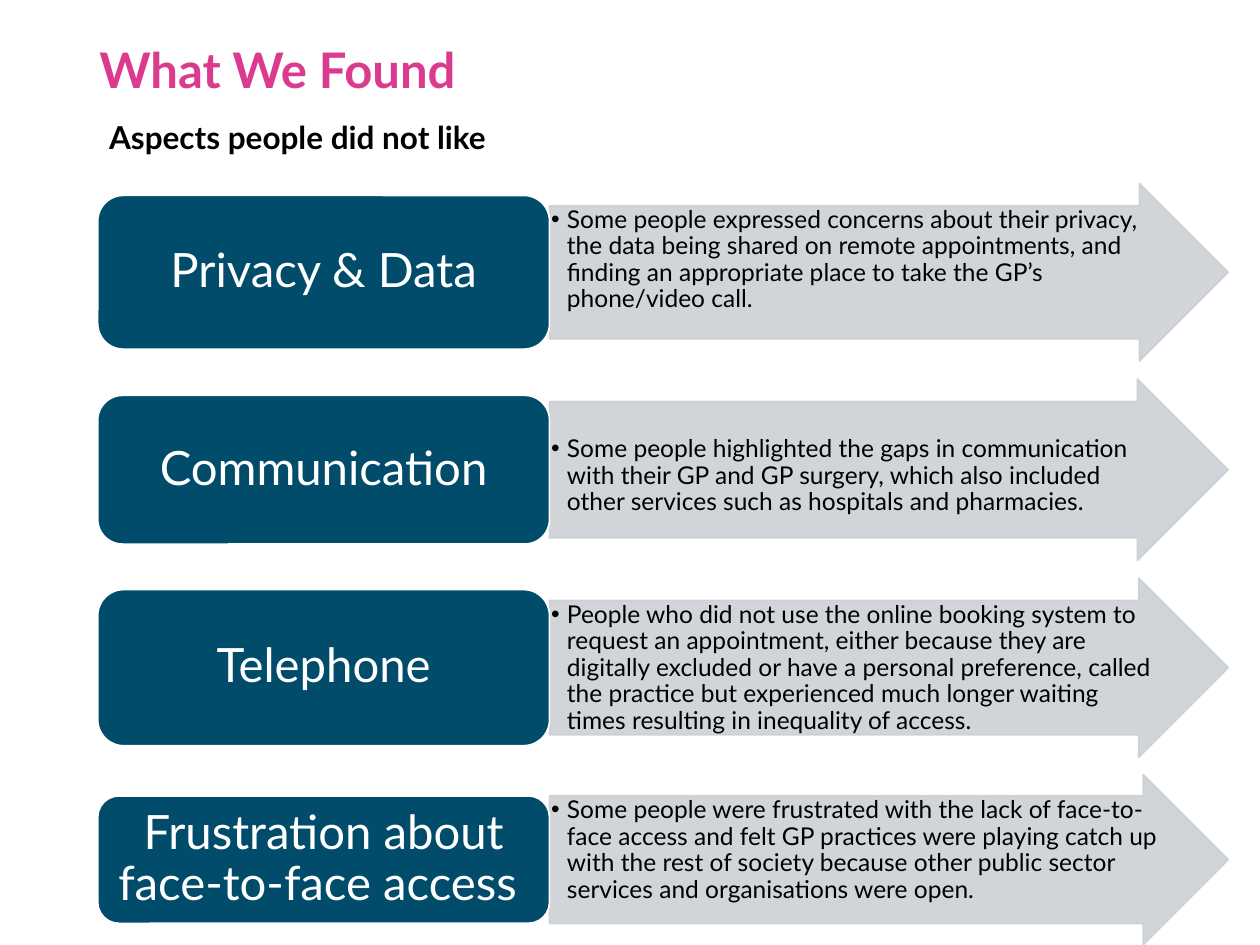
import pptx
import pptx.dml.color
import pptx.enum.shapes
import pptx.enum.text
import pptx.oxml.ns
import pptx.util
from pptx.util import Cm

SHAPES = pptx.enum.shapes.MSO_SHAPE
ALIGN = pptx.enum.text.PP_ALIGN
ANCHOR = pptx.enum.text.MSO_ANCHOR

COLOURS = {
    "heading": "DB3B8E",
    "label": "004C6A",
    "arrow": "CCD0D4",
    "text": "000000",
    "light": "FFFFFF",
}

FONTS = {
    "title": {"size": 28, "bold": True, "colour": "heading"},
    "subtitle": {"size": 18, "bold": True, "colour": "text"},
    "label": {"size": 27, "bold": False, "colour": "light"},
    "detail": {"size": 14, "bold": False, "colour": "text"},
}

LABEL_LEFT, LABEL_WIDTH = 1.97, 9.11
ARROW_LEFT, ARROW_WIDTH = 11.08, 13.68
ARROW_OPACITY = 90
BODY_SHARE = 0.75
BULLET_INDENT = 0.32

ASPECTS = [
    {
        "label": "Privacy & Data",
        "detail": "Some people expressed concerns about their privacy, the data being shared on remote appointments, and finding an appropriate place to take the GP’s phone/video call.",
        "middle": 5.49, "arrow_height": 3.58, "label_height": 3.1, "top_inset": 0.03,
    },
    {
        "label": "Communication",
        "detail": "Some people highlighted the gaps in communication with their GP and GP surgery, which also included other services such as hospitals and pharmacies.",
        "middle": 9.47, "arrow_height": 3.66, "label_height": 3.0, "top_inset": 0.7,
    },
    {
        "label": "Telephone",
        "detail": "People who did not use the online booking system to request an appointment, either because they are digitally excluded or have a personal preference, called the practice but experienced much longer waiting times resulting in inequality of access.",
        "middle": 13.46, "arrow_height": 3.61, "label_height": 3.15, "top_inset": 0.03,
    },
    {
        "label": "Frustration about face-to-face access ",
        "detail": "Some people were frustrated with the lack of face-to-face access and felt GP practices were playing catch up with the rest of society because other public sector services and organisations were open.",
        "middle": 17.33, "arrow_height": 3.43, "label_height": 2.57, "top_inset": 0.03,
    },
]


def colour(name):
    return pptx.dml.color.RGBColor.from_string(COLOURS[name])


def set_attributes(target, values):
    for name, value in values.items():
        setattr(target, name, value)


def write_text(shape, text, style, frame_format, paragraph_format, bullet=False):
    frame = shape.text_frame
    set_attributes(frame, {"word_wrap": True, **frame_format})
    frame.text = text
    paragraph = frame.paragraphs[0]
    if bullet:
        add_bullet(paragraph)
    set_attributes(paragraph, paragraph_format)
    font = FONTS[style]
    set_attributes(paragraph.runs[0].font, {
        "name": "Lato",
        "size": pptx.util.Pt(font["size"]),
        "bold": font["bold"],
    })
    paragraph.runs[0].font.color.rgb = colour(font["colour"])


def add_bullet(paragraph):
    properties = paragraph._p.get_or_add_pPr()
    properties.set("marL", str(Cm(BULLET_INDENT)))
    properties.set("indent", str(-Cm(BULLET_INDENT)))
    for tag, name, value in (("a:buFont", "typeface", "Arial"), ("a:buChar", "char", "•")):
        properties.append(properties.makeelement(pptx.oxml.ns.qn(tag), {name: value}))


def add_block(slide, kind, left, middle, width, height, fill, line):
    shape = slide.shapes.add_shape(
        kind, Cm(left), Cm(middle - height / 2), Cm(width), Cm(height))
    shape.shadow.inherit = False
    shape.fill.solid()
    shape.fill.fore_color.rgb = colour(fill)
    shape.line.color.rgb = colour(line)
    shape.line.width = pptx.util.Pt(1)
    return shape


def set_opacity(shape, percent):
    for element in shape._element.spPr.iter(pptx.oxml.ns.qn("a:srgbClr")):
        alpha = element.makeelement(pptx.oxml.ns.qn("a:alpha"), {"val": str(percent * 1000)})
        element.append(alpha)


def add_headings(slide):
    title = slide.shapes.title
    set_attributes(title, {
        "left": Cm(1.75), "top": Cm(0.81), "width": Cm(21.9), "height": Cm(2.24),
    })
    write_text(title, "What We Found", "title",
               {"vertical_anchor": ANCHOR.TOP},
               {"alignment": ALIGN.LEFT, "line_spacing": 0.9})
    subtitle = slide.shapes.add_textbox(Cm(1.95), Cm(2.26), Cm(12.14), Cm(1.02))
    write_text(subtitle, "Aspects people did not like", "subtitle", {}, {})


def add_detail(slide, aspect):
    height = aspect["arrow_height"]
    arrow = add_block(slide, SHAPES.RIGHT_ARROW, ARROW_LEFT, aspect["middle"],
                      ARROW_WIDTH, height, "arrow", "arrow")
    arrow.adjustments[0] = BODY_SHARE
    arrow.adjustments[1] = 0.5
    set_opacity(arrow, ARROW_OPACITY)

    body_height = height * BODY_SHARE
    detail = slide.shapes.add_textbox(
        Cm(ARROW_LEFT), Cm(aspect["middle"] - body_height / 2),
        Cm(ARROW_WIDTH - body_height / 2), Cm(body_height))
    write_text(detail, aspect["detail"], "detail", {
        "margin_left": Cm(0.03), "margin_right": Cm(0.03),
        "margin_top": Cm(aspect["top_inset"]), "margin_bottom": Cm(0.03),
    }, {"line_spacing": 0.9}, bullet=True)


def add_label(slide, aspect):
    label = add_block(slide, SHAPES.ROUNDED_RECTANGLE, LABEL_LEFT, aspect["middle"],
                      LABEL_WIDTH, aspect["label_height"], "label", "light")
    write_text(label, aspect["label"], "label", {
        "vertical_anchor": ANCHOR.MIDDLE,
        "margin_left": Cm(0.28), "margin_right": Cm(0.28),
        "margin_top": Cm(0.15), "margin_bottom": Cm(0.15),
    }, {"alignment": ALIGN.CENTER, "line_spacing": 0.9})


def main():
    presentation = pptx.Presentation()
    set_attributes(presentation, {"slide_width": Cm(25.4), "slide_height": Cm(19.05)})
    slide = presentation.slides.add_slide(presentation.slide_layouts[5])
    add_headings(slide)
    for aspect in ASPECTS:
        add_detail(slide, aspect)
        add_label(slide, aspect)
    presentation.save("out.pptx")


if __name__ == "__main__":
    main()
